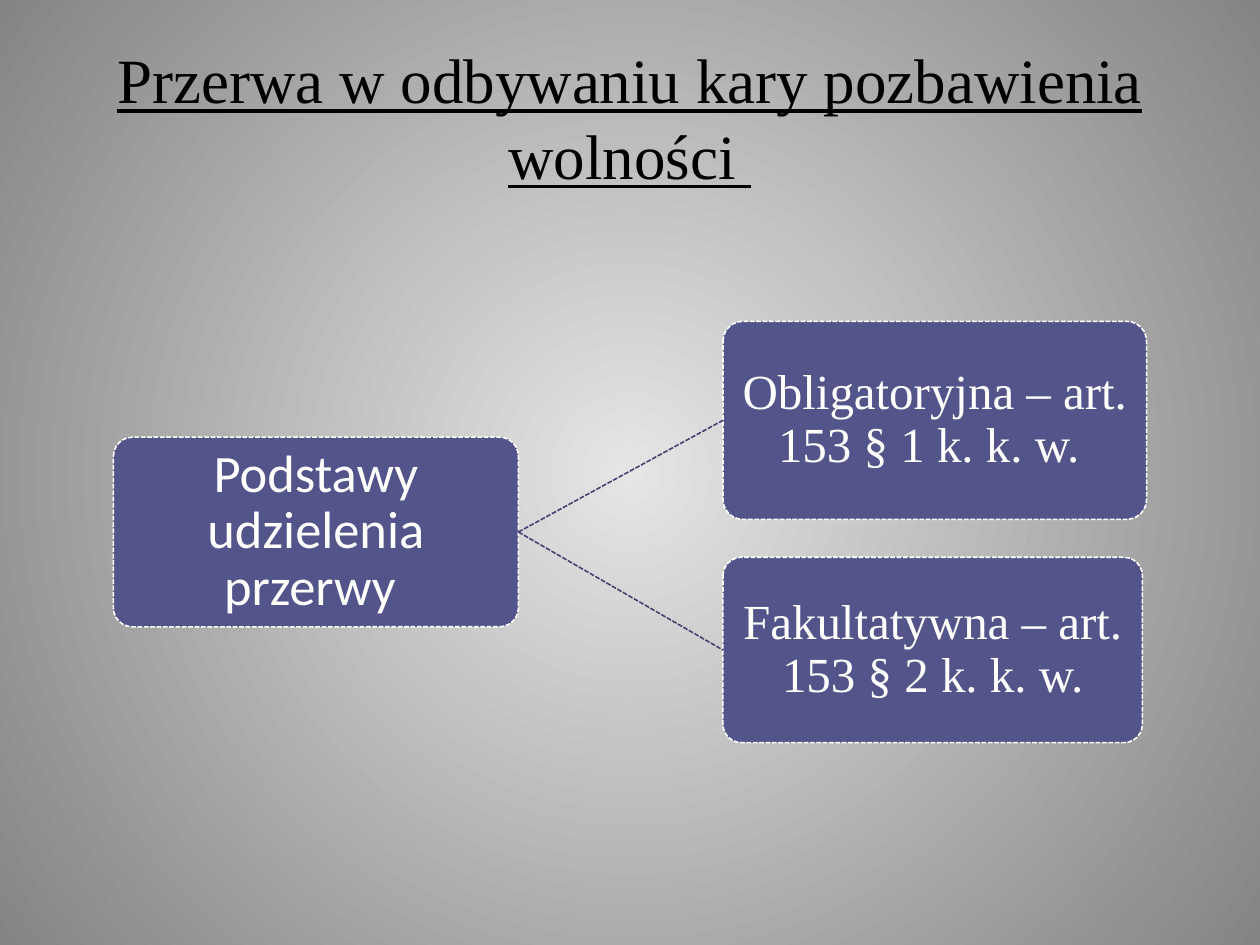
from lxml.etree import SubElement
from pptx import Presentation
from pptx.dml.color import RGBColor
from pptx.enum.dml import MSO_LINE as Dash
from pptx.enum.shapes import MSO_CONNECTOR as Link, MSO_SHAPE as Shape
from pptx.enum.text import MSO_ANCHOR as Anchor, PP_ALIGN as Align
from pptx.oxml.ns import qn
from pptx.util import Inches, Pt

WIDE, HIGH = Inches(10), Inches(7.5)
PALE = RGBColor(0xE5, 0xE5, 0xE5)
GREY = RGBColor(0x84, 0x84, 0x84)
PLUM = RGBColor(0x53, 0x54, 0x8A)
DARK = RGBColor(0x42, 0x43, 0x6F)
WHITE = RGBColor(0xFF, 0xFF, 0xFF)
BLACK = RGBColor(0x00, 0x00, 0x00)
SERIF, SANS = "Times New Roman", "Calibri"


def area(box, part):
    """Turn shares of a box into a box in slide units."""
    left, top, wide, high = box
    x, y, w, h = part
    return (int(left + x * wide), int(top + y * high),
            int(w * wide), int(h * high))


def backdrop(slide):
    """Fill the slide with a round gradient, pale in the centre."""
    fill = slide.background.fill
    fill.gradient()
    for stop, color in zip(fill.gradient_stops, (PALE, GREY)):
        stop.color.rgb = color
    grad = next(slide.element.iter(qn("a:gradFill")))
    grad.remove(grad.find(qn("a:lin")))
    path = SubElement(grad, qn("a:path"), path="circle")
    SubElement(path, qn("a:fillToRect"), l="50000", t="50000", r="50000", b="50000")


def write(frame, text, font, size, color):
    """Add one centred run to a text frame."""
    frame.word_wrap = True
    frame.vertical_anchor = Anchor.MIDDLE
    para = frame.paragraphs[0]
    para.alignment = Align.CENTER
    run = para.add_run()
    run.text = text
    run.font.name, run.font.size = font, Pt(size)
    run.font.color.rgb = color
    return run


def heading(slide, box, text):
    """Place the underlined title in the given box."""
    title = slide.shapes.title
    title.left, title.top, title.width, title.height = box
    write(title.text_frame, text, SERIF, 36, BLACK).font.underline = True


def stroke(line, color):
    """Give a line its fine dashes."""
    line.color.rgb = color
    line.width = Pt(0.9)
    line.dash_style = Dash.SQUARE_DOT


def node(slide, box, text, font, size):
    """Draw one rounded node of the tree."""
    shape = slide.shapes.add_shape(Shape.ROUNDED_RECTANGLE, *box)
    shape.shadow.inherit = False
    shape.adjustments[0] = 0.1
    shape.fill.solid()
    shape.fill.fore_color.rgb = PLUM
    stroke(shape.line, WHITE)
    frame = shape.text_frame
    frame.margin_left = frame.margin_right = Inches(0.02)
    frame.margin_top = frame.margin_bottom = Inches(0.02)
    write(frame, text, font, size, WHITE)
    frame.paragraphs[0].line_spacing = 0.9
    return shape


def branch(slide, root, leaf):
    """Join the right side of the root to the left side of a leaf."""
    link = slide.shapes.add_connector(Link.STRAIGHT, 0, 0, 0, 0)
    link.begin_connect(root, 3)
    link.end_connect(leaf, 1)
    stroke(link.line, DARK)
    SubElement(link.element.spPr, qn("a:effectLst"))


def tree(slide, box, stem, leaves):
    """Draw the root node and its leaves within the given box."""
    part, text = stem
    root = node(slide, area(box, part), text, SANS, 30)
    for part, text in leaves:
        branch(slide, root, node(slide, area(box, part), text, SERIF, 28))


def main():
    """Build and save the slide."""
    deck = Presentation()
    deck.slide_width, deck.slide_height = WIDE, HIGH
    slide = deck.slides.add_slide(deck.slide_layouts[5])
    page = (0, 0, WIDE, HIGH)
    backdrop(slide)
    heading(slide, area(page, (0.05, 0.04, 0.9, 1 / 6)),
            "Przerwa w odbywaniu kary pozbawienia wolności ")
    tree(slide, area(page, (0.09, 0.34, 0.82, 0.446)),
         ((0, 0.275, 0.392, 0.45), "Podstawy udzielenia przerwy "),
         [((0.59, 0, 0.41, 0.47), "Obligatoryjna – art. 153 § 1 k. k. w. "),
          ((0.59, 0.56, 0.406, 0.44), "Fakultatywna – art. 153 § 2 k. k. w.")])
    deck.save("out.pptx")


if __name__ == "__main__":
    main()
